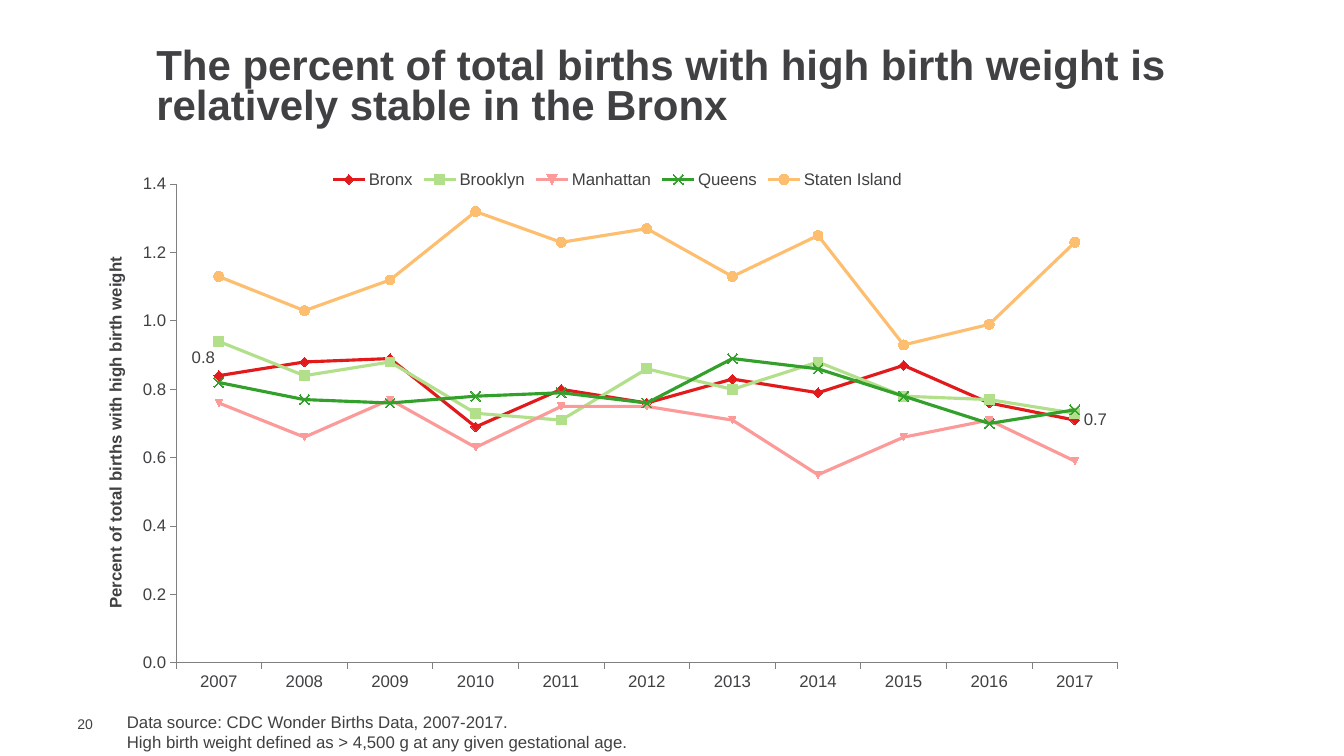
from lxml import etree
from pptx import Presentation
from pptx.chart.data import CategoryChartData
from pptx.dml.color import RGBColor
from pptx.enum.chart import XL_LABEL_POSITION, XL_LEGEND_POSITION, XL_MARKER_STYLE, XL_TICK_MARK
from pptx.enum.chart import XL_CHART_TYPE
from pptx.enum.text import MSO_ANCHOR, MSO_AUTO_SIZE, PP_ALIGN
from pptx.oxml import parse_xml
from pptx.oxml.ns import nsdecls
from pptx.util import Inches, Pt

LINE_MARKERS = XL_CHART_TYPE.LINE_MARKERS
LEGEND_TOP = XL_LEGEND_POSITION.TOP
TICK_OUT, TICK_NONE = XL_TICK_MARK.OUTSIDE, XL_TICK_MARK.NONE
ABOVE, RIGHT = XL_LABEL_POSITION.ABOVE, XL_LABEL_POSITION.RIGHT
DIAMOND, SQUARE = XL_MARKER_STYLE.DIAMOND, XL_MARKER_STYLE.SQUARE
AUTOMATIC, CROSS = XL_MARKER_STYLE.AUTOMATIC, XL_MARKER_STYLE.X
CIRCLE = XL_MARKER_STYLE.CIRCLE
MIDDLE, TOP = MSO_ANCHOR.MIDDLE, MSO_ANCHOR.TOP
NO_FIT, LEFT = MSO_AUTO_SIZE.NONE, PP_ALIGN.LEFT

INK = RGBColor(0x41, 0x40, 0x42)
AXIS_GRAY = RGBColor(0x80, 0x80, 0x80)
RED = RGBColor(0xE3, 0x1A, 0x1C)
LIGHT_GREEN = RGBColor(0xB2, 0xDF, 0x8A)
PINK = RGBColor(0xFB, 0x9A, 0x99)
GREEN = RGBColor(0x33, 0xA0, 0x2C)
ORANGE = RGBColor(0xFD, 0xBF, 0x6F)

YEARS = [str(year) for year in range(2007, 2018)]
# borough: colour, marker, marker size, percent for each year
BOROUGHS = {
    "Bronx": (RED, DIAMOND, 7,
              [0.84, 0.88, 0.89, 0.69, 0.80, 0.76, 0.83, 0.79, 0.87, 0.76, 0.71]),
    "Brooklyn": (LIGHT_GREEN, SQUARE, 7,
                 [0.94, 0.84, 0.88, 0.73, 0.71, 0.86, 0.80, 0.88, 0.78, 0.77, 0.73]),
    "Manhattan": (PINK, AUTOMATIC, 5,
                  [0.76, 0.66, 0.77, 0.63, 0.75, 0.75, 0.71, 0.55, 0.66, 0.71, 0.59]),
    "Queens": (GREEN, CROSS, 7,
               [0.82, 0.77, 0.76, 0.78, 0.79, 0.76, 0.89, 0.86, 0.78, 0.70, 0.74]),
    "Staten Island": (ORANGE, CIRCLE, 7,
                      [1.13, 1.03, 1.12, 1.32, 1.23, 1.27, 1.13, 1.25, 0.93, 0.99, 1.23]),
}


def manual_layout(**settings):
    """Return a c:layout element holding the given manual settings in order."""
    layout = parse_xml(f"<c:layout {nsdecls('c')}><c:manualLayout/></c:layout>")
    for name, value in settings.items():
        tag = etree.QName(layout.nsmap["c"], name)
        etree.SubElement(layout[0], tag).set("val", str(value))
    return layout


class SlideBuilder:
    def __init__(self, page, font_name="Arial", color=INK):
        self.page = page
        self.font_name = font_name
        self.color = color

    def style_font(self, font, size, bold=False):
        font.name = self.font_name
        font.size = Pt(size)
        font.bold = bold
        font.color.rgb = self.color

    def fill_frame(self, frame, text, size, anchor, bold=False, line_spacing=None):
        frame.text = text
        frame.word_wrap = True
        frame.auto_size = NO_FIT
        frame.vertical_anchor = anchor
        for paragraph in frame.paragraphs:
            paragraph.alignment = LEFT
            if line_spacing:
                paragraph.line_spacing = line_spacing
            for span in paragraph.runs:
                self.style_font(span.font, size, bold)

    def title(self, text, left, top, width, height):
        box = self.page.shapes.title
        box.left, box.top = Inches(left), Inches(top)
        box.width, box.height = Inches(width), Inches(height)
        self.fill_frame(box.text_frame, text, 30, MIDDLE, True, 0.8)

    def text(self, text, left, top, width, height, size, anchor=TOP):
        box = self.page.shapes.add_textbox(
            Inches(left), Inches(top), Inches(width), Inches(height))
        self.fill_frame(box.text_frame, text, size, anchor)
        return box

    def style_axis(self, axis):
        axis.has_major_gridlines = False
        axis.major_tick_mark = TICK_OUT
        axis.minor_tick_mark = TICK_NONE
        axis.format.line.color.rgb = AXIS_GRAY
        axis.format.line.width = Pt(0.75)
        self.style_font(axis.tick_labels.font, 12)

    def point_label(self, series, index, position, shift=None):
        """Show one point's value, optionally shifted by a part of the chart width."""
        label = series.points[index].data_label
        self.style_font(label.font, 12)
        label.position = position
        if shift:
            element = series.points[index].data_label.font and series.data_labels._element
            element.dLbl_lst[0].insert(1, manual_layout(x=shift, y=0))

    def line_chart(self, axis_title, left, top, width, height):
        data = CategoryChartData(number_format="0.0")
        data.categories = YEARS
        for name, (_, _, _, values) in BOROUGHS.items():
            data.add_series(name, values)
        chart = self.page.shapes.add_chart(
            LINE_MARKERS, Inches(left), Inches(top), Inches(width), Inches(height), data).chart
        chart.has_title = False
        self.style_font(chart.font, 10)

        chart.has_legend = True
        chart.legend.position = LEGEND_TOP
        chart.legend.include_in_layout = False
        self.style_font(chart.legend.font, 12)

        self.style_axis(chart.category_axis)
        value_axis = chart.value_axis
        self.style_axis(value_axis)
        value_axis.minimum_scale, value_axis.maximum_scale = 0, 1.4
        value_axis.major_unit = 0.2
        value_axis.tick_labels.number_format = "0.0"
        value_axis.tick_labels.number_format_is_linked = False
        frame = value_axis.axis_title.text_frame
        frame.text = axis_title
        self.style_font(frame.paragraphs[0].runs[0].font, 12, True)
        frame._txBody.bodyPr.set("rot", "-5400000")
        frame._txBody.bodyPr.set("vert", "horz")

        plot = chart.plots[0]
        plot.vary_by_categories = False
        for series, (color, symbol, size, _) in zip(plot.series, BOROUGHS.values()):
            series.smooth = False
            series.format.line.color.rgb = color
            series.format.line.width = Pt(2.25)
            marker = series.marker
            marker.style, marker.size = symbol, size
            marker.format.fill.solid()
            marker.format.fill.fore_color.rgb = color
            marker.format.line.color.rgb = color

        plot_area = chart._chartSpace.chart.plotArea
        for layout in plot_area.findall(f"{{{plot_area.nsmap['c']}}}layout"):
            plot_area.remove(layout)
        plot_area.insert(0, manual_layout(
            layoutTarget="inner", xMode="edge", yMode="edge",
            x=0.072, y=0.046, w=0.913, h=0.881))
        return chart


def main():
    deck = Presentation()
    deck.slide_width, deck.slide_height = Inches(13.33), Inches(7.5)
    builder = SlideBuilder(deck.slides.add_slide(deck.slide_layouts[5]))

    builder.title("The percent of total births with high birth weight is "
                  "relatively stable in the Bronx", 1.45, 0.42, 10.42, 0.91)

    chart = builder.line_chart("Percent of total births with high birth weight",
                               1.01, 1.58, 10.23, 5.39)
    bronx = chart.plots[0].series[0]
    builder.point_label(bronx, 0, ABOVE, shift=-0.015)
    builder.point_label(bronx, len(YEARS) - 1, RIGHT)

    builder.text("Data source: CDC Wonder Births Data, 2007-2017.\n"
                 "High birth weight defined as > 4,500 g at any given gestational age.",
                 1.16, 7.01, 9.92, 0.5, 12)
    number = builder.text("20", 0.67, 7.1, 0.43, 0.17, 10, MIDDLE).text_frame
    number.margin_top = number.margin_right = number.margin_bottom = 0
    deck.save("out.pptx")


if __name__ == "__main__":
    main()
